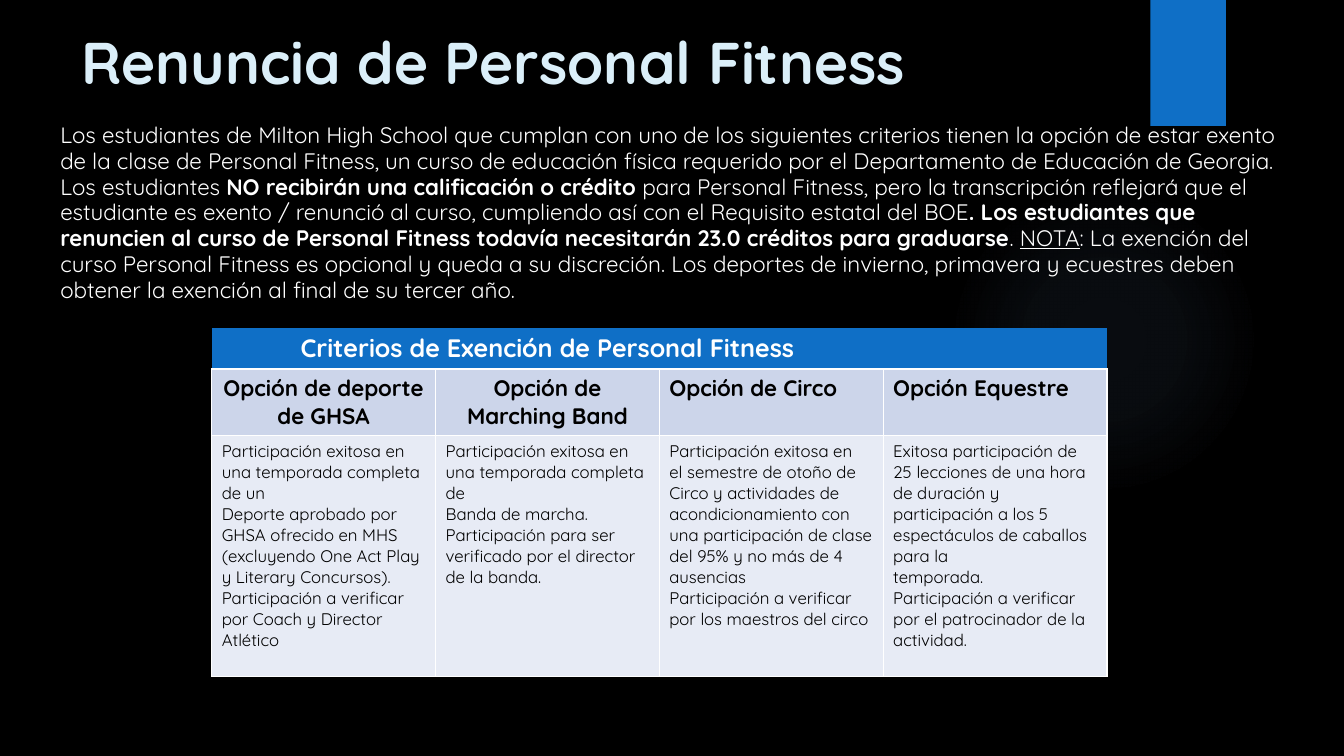
from dataclasses import dataclass

from lxml import etree
from pptx import Presentation
from pptx.dml.color import RGBColor
from pptx.enum.shapes import MSO_SHAPE
from pptx.enum.text import MSO_ANCHOR, PP_ALIGN
from pptx.oxml import parse_xml
from pptx.oxml.ns import qn
from pptx.util import Inches, Pt

LEFT, CENTER = PP_ALIGN.LEFT, PP_ALIGN.CENTER
TOP = MSO_ANCHOR.TOP
ELLIPSE, RECTANGLE = MSO_SHAPE.OVAL, MSO_SHAPE.RECTANGLE

FONT = "Quicksand"
COLORS = {
    "background": "000000",
    "accent": "0F6FC6",
    "glow": "82B1E5",
    "title": "DBEFF9",
    "white": "FFFFFF",
    "black": "000000",
    "heading_fill": "CCD5EA",
    "detail_fill": "E7EBF5",
}
DRAWING_NS = "http://schemas.openxmlformats.org/drawingml/2006/main"
GLOW_STOPS = ((0, 7), (36, 6), (69, 0))  # position and opacity, in percent

TITLE = "Renuncia de Personal Fitness"
TABLE_TITLE = "Criterios de Exención de Personal Fitness"
COLUMN_WIDTH = 2.22
ROW_HEIGHTS = (0.41, 0.66, 2.39)


@dataclass(frozen=True)
class Span:
    text: str
    bold: bool = False
    underline: bool = False


@dataclass(frozen=True)
class Option:
    heading: str
    align: PP_ALIGN
    details: tuple[str, ...]


INTRODUCTION = (
    Span("Los estudiantes de Milton High School que cumplan con uno de los siguientes "
         "criterios tienen la opción de estar exento de la clase de Personal Fitness, un "
         "curso de educación física requerido por el Departamento de Educación de Georgia. "
         "Los estudiantes "),
    Span("NO recibirán una calificación o crédito ", bold=True),
    Span("para Personal Fitness, pero la transcripción reflejará que el estudiante es "
         "exento / renunció al curso, cumpliendo así con el Requisito estatal del BOE"),
    Span(". Los estudiantes que renuncien al curso de Personal Fitness todavía "
         "necesitarán 23.0 créditos para graduarse", bold=True),
    Span(". "),
    Span("NOTA", underline=True),
    Span(": La exención del curso Personal Fitness es opcional y queda a su discreción. "
         "Los deportes de invierno, primavera y ecuestres deben obtener la exención al "
         "final de su tercer año."),
)

OPTIONS = (
    Option("Opción de deporte de GHSA", CENTER, (
        "Participación exitosa en",
        "una temporada completa de un",
        "Deporte aprobado por GHSA ofrecido en MHS (excluyendo One Act Play y Literary "
        "Concursos).",
        "Participación a verificar",
        "por Coach y Director Atlético",
    )),
    Option("Opción de Marching Band", CENTER, (
        "Participación exitosa en",
        "una temporada completa de",
        "Banda de marcha.",
        "Participación para ser",
        "verificado por el director de la banda.",
    )),
    Option("Opción de Circo", LEFT, (
        "Participación exitosa en",
        "el semestre de otoño de",
        "Circo y actividades de acondicionamiento con",
        "una participación de clase del 95% y no más de 4 ausencias",
        "Participación a verificar",
        "por los maestros del circo",
    )),
    Option("Opción Equestre", LEFT, (
        "Exitosa participación de",
        "25 lecciones de una hora de duración y participación a los 5",
        "espectáculos de caballos para la",
        "temporada.",
        "Participación a verificar",
        "por el patrocinador de la actividad.",
    )),
)


def rgb(name: str) -> RGBColor:
    return RGBColor.from_string(COLORS[name])


def write_text(frame, paragraphs, *, size: float, color: str, align=LEFT,
               line_spacing: float = 1.0) -> None:
    """Fill a text frame; each paragraph is a sequence of spans."""
    frame.word_wrap = True
    frame.vertical_anchor = TOP
    for index, spans in enumerate(paragraphs):
        para = frame.paragraphs[0] if index == 0 else frame.add_paragraph()
        para.alignment = align
        para.line_spacing = line_spacing
        for span in spans:
            run = para.add_run()
            run.text = span.text
            run.font.name = FONT
            run.font.size = Pt(size)
            run.font.bold = span.bold
            run.font.underline = span.underline
            run.font.color.rgb = rgb(color)


def add_text_box(page, left: float, top: float, width: float, height: float,
                 spans, **text_format) -> None:
    box = page.shapes.add_textbox(Inches(left), Inches(top), Inches(width), Inches(height))
    write_text(box.text_frame, [spans], **text_format)


def add_plain_shape(page, kind, left: float, top: float, width: float, height: float):
    shape = page.shapes.add_shape(kind, Inches(left), Inches(top),
                                  Inches(width), Inches(height))
    shape.shadow.inherit = False
    shape.line.fill.background()
    return shape


def fill_with_glow(shape) -> None:
    """Give a shape a radial gradient that fades out towards its edge."""
    stops = "".join(
        f'<a:gs pos="{position * 1000}"><a:srgbClr val="{COLORS["glow"]}">'
        f'<a:alpha val="{opacity * 1000}"/></a:srgbClr></a:gs>'
        for position, opacity in GLOW_STOPS)
    gradient = parse_xml(
        f'<a:gradFill xmlns:a="{DRAWING_NS}"><a:gsLst>{stops}</a:gsLst>'
        '<a:path path="circle"><a:fillToRect l="50000" t="50000" r="50000" b="50000"/>'
        '</a:path></a:gradFill>')
    shape.fill.background()
    properties = shape._element.spPr
    properties.replace(properties.find(qn("a:noFill")), gradient)


def style_cell(cell, fill: str, bordered: bool) -> None:
    properties = cell._tc.get_or_add_tcPr()
    for side in ("lnL", "lnR", "lnT", "lnB"):
        border = etree.SubElement(properties, qn(f"a:{side}"), w=str(Pt(1)))
        if bordered:
            paint = etree.SubElement(border, qn("a:solidFill"))
            etree.SubElement(paint, qn("a:srgbClr"), val=COLORS["white"])
        else:
            etree.SubElement(border, qn("a:noFill"))
    cell.fill.solid()
    cell.fill.fore_color.rgb = rgb(fill)


def add_criteria_table(page, left: float, top: float) -> None:
    table = page.shapes.add_table(
        len(ROW_HEIGHTS), len(OPTIONS), Inches(left), Inches(top),
        Inches(COLUMN_WIDTH * len(OPTIONS)), Inches(sum(ROW_HEIGHTS))).table
    for row, height in zip(table.rows, ROW_HEIGHTS):
        row.height = Inches(height)

    for index, option in enumerate(OPTIONS):
        table.columns[index].width = Inches(COLUMN_WIDTH)
        title, heading, details = (table.cell(row, index) for row in range(3))
        style_cell(title, "accent", bordered=False)
        style_cell(heading, "heading_fill", bordered=True)
        style_cell(details, "detail_fill", bordered=True)
        write_text(heading.text_frame, [[Span(option.heading, bold=True)]],
                   size=16, color="black", align=option.align)
        write_text(details.text_frame, [[Span(line)] for line in option.details],
                   size=12, color="black")

    table.cell(0, 0).merge(table.cell(0, 2))
    write_text(table.cell(0, 0).text_frame, [[Span(TABLE_TITLE, bold=True)]],
               size=18, color="white", align=CENTER)


def main() -> None:
    deck = Presentation()
    deck.slide_width, deck.slide_height = Inches(13.33), Inches(7.5)
    page = deck.slides.add_slide(deck.slide_layouts[6])
    page.background.fill.solid()
    page.background.fill.fore_color.rgb = rgb("background")

    fill_with_glow(add_plain_shape(page, ELLIPSE, 9.41, 1.83, 3.08, 3.08))
    ribbon = add_plain_shape(page, RECTANGLE, 11.41, 0, 0.75, 1.25)
    ribbon.fill.solid()
    ribbon.fill.fore_color.rgb = rgb("accent")

    add_text_box(page, 0.71, 0.21, 10.29, 1.1, [Span(TITLE, bold=True)],
                 size=42, color="title")
    add_text_box(page, 0.5, 1.17, 12.47, 2.12, INTRODUCTION,
                 size=16, color="white", line_spacing=0.96)
    add_criteria_table(page, 2.1, 3.25)
    deck.save("out.pptx")


if __name__ == "__main__":
    main()
